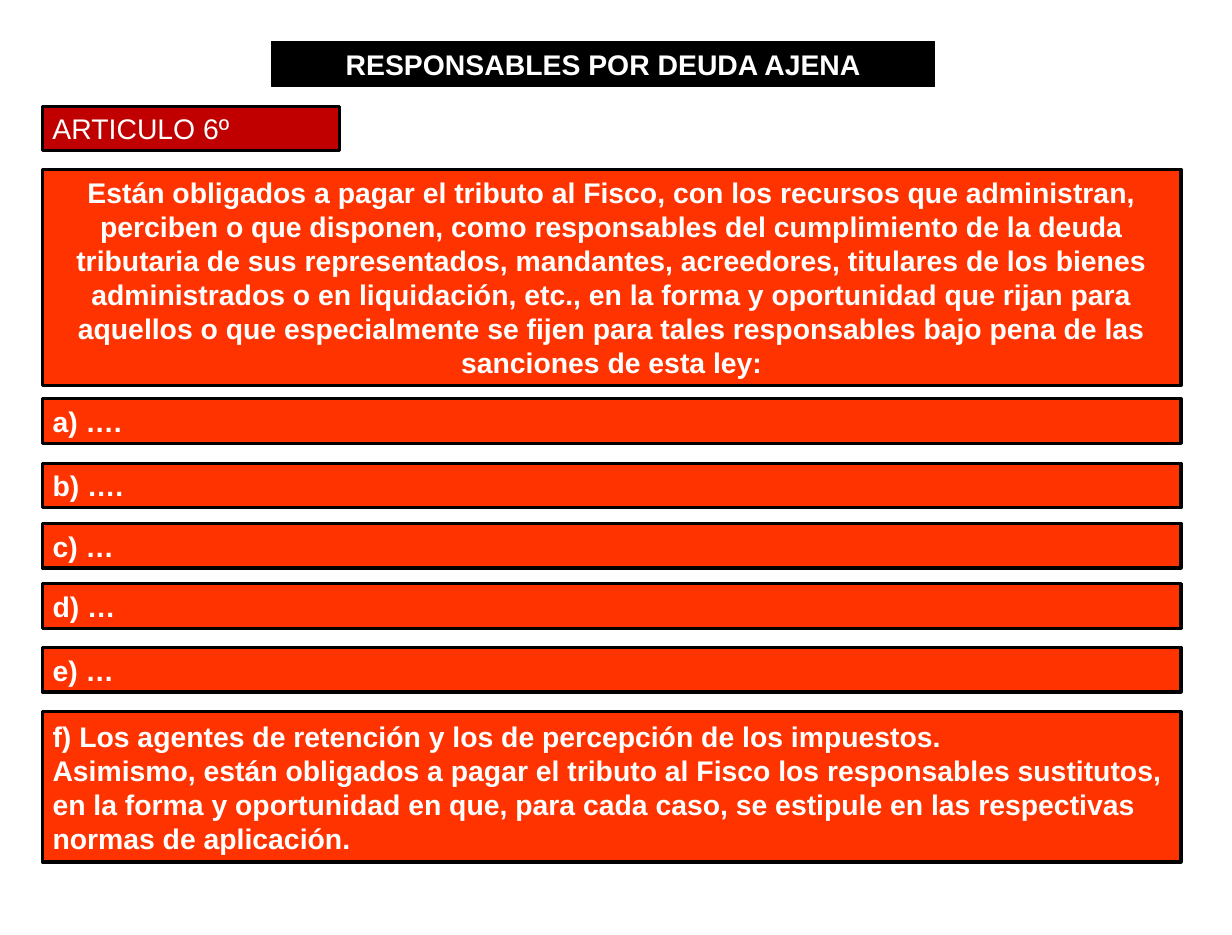
from pptx import Presentation
from pptx.dml.color import RGBColor
from pptx.enum.shapes import MSO_SHAPE
from pptx.enum.text import MSO_ANCHOR, MSO_AUTO_SIZE, PP_ALIGN
from pptx.util import Pt

RECTANGLE = MSO_SHAPE.RECTANGLE
MIDDLE = MSO_ANCHOR.MIDDLE
GROW = MSO_AUTO_SIZE.SHAPE_TO_FIT_TEXT
LEFT, CENTER = PP_ALIGN.LEFT, PP_ALIGN.CENTER

MARGIN = 30
FULL_WIDTH = 804
ROW_HEIGHT = 31.5


def color(hex_string):
    return RGBColor.from_string(hex_string)


def add_box(text, top, left=MARGIN, width=FULL_WIDTH, height=ROW_HEIGHT,
            fill="FF3300", line_width=2.25, bold=True, align=LEFT):
    shape = slide.shapes.add_shape(RECTANGLE, Pt(left), Pt(top), Pt(width), Pt(height))
    shape.shadow.inherit = False
    shape.fill.solid()
    shape.fill.fore_color.rgb = color(fill)
    shape.line.color.rgb = color("000000")
    shape.line.width = Pt(line_width)
    frame = shape.text_frame
    frame.word_wrap = True
    frame.auto_size = GROW
    frame.vertical_anchor = MIDDLE
    frame.text = text
    for paragraph in frame.paragraphs:
        paragraph.alignment = align
        font = paragraph.font
        font.name = "Arial"
        font.size = Pt(20)
        font.bold = bold
        font.color.rgb = color("FFFFFF")


presentation = Presentation()
presentation.slide_width = Pt(870)
presentation.slide_height = Pt(660)
slide = presentation.slides.add_slide(presentation.slide_layouts[6])

# Title and article number
add_box("RESPONSABLES POR DEUDA AJENA", 29.5, left=192, width=468,
        fill="000000", line_width=0.75, align=CENTER)
add_box("ARTICULO 6º", 75, width=210, fill="C00000", bold=False)

# Opening statement of the article
add_box("Están obligados a pagar el tributo al Fisco, con los recursos que administran, "
        "perciben o que disponen, como responsables del cumplimiento de la deuda "
        "tributaria de sus representados, mandantes, acreedores, titulares de los bienes "
        "administrados o en liquidación, etc., en la forma y oportunidad que rijan para "
        "aquellos o que especialmente se fijen para tales responsables bajo pena de las "
        "sanciones de esta ley:", 119.5, height=152.5, align=CENTER)

# Short clauses
clauses = [("a) ….", 281.5), ("b) ….", 327), ("c) …", 369.5), ("d) …", 412), ("e) …", 457)]
for clause, top in clauses:
    add_box(clause, top)

# Last clause
add_box("f) Los agentes de retención y los de percepción de los impuestos.\n"
        "Asimismo, están obligados a pagar el tributo al Fisco los responsables sustitutos, "
        "en la forma y oportunidad en que, para cada caso, se estipule en las respectivas "
        "normas de aplicación.", 502.5, height=106)

presentation.save("out.pptx")
